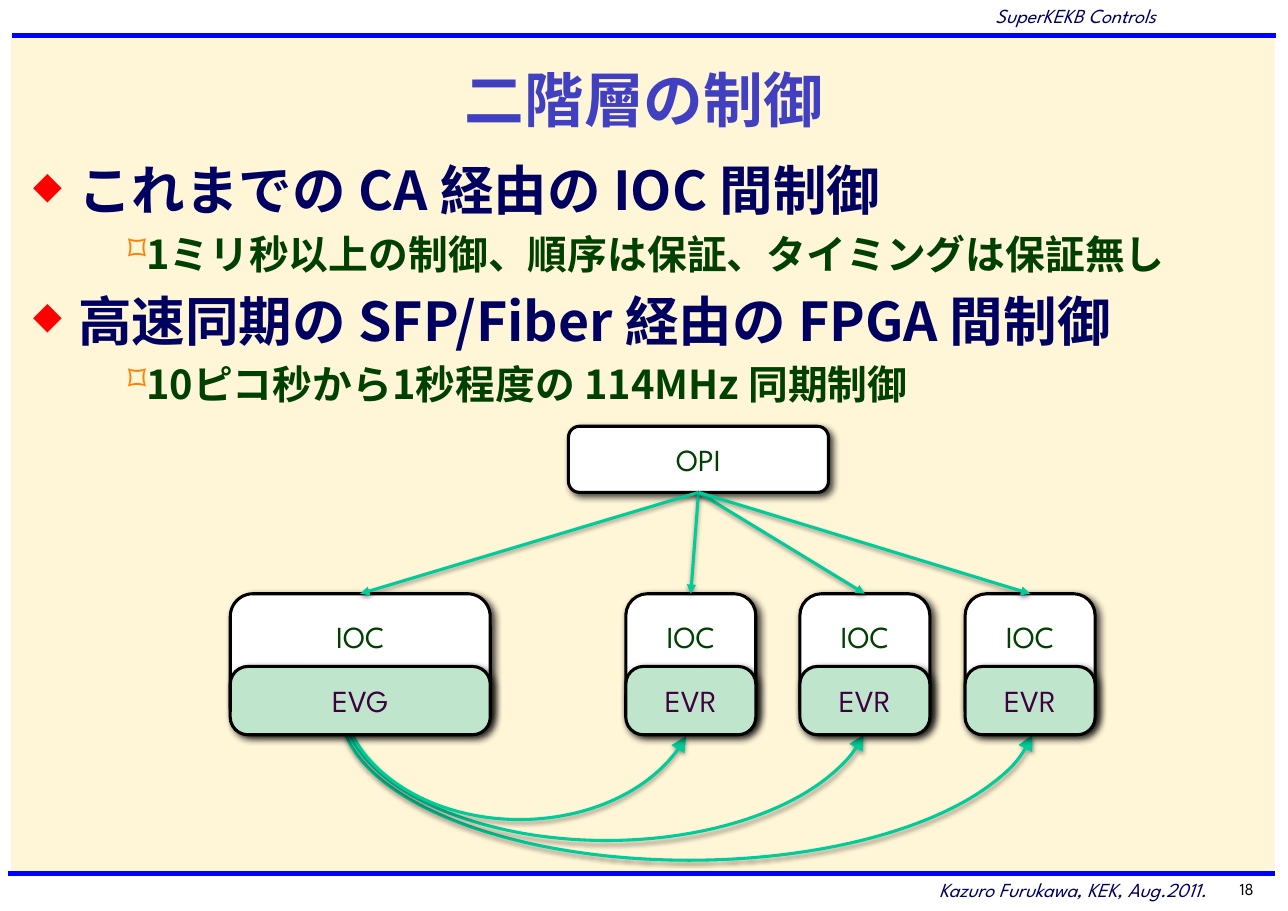
import pptx
import pptx.util
import pptx.dml.color
import pptx.enum.shapes
import pptx.enum.text
import pptx.oxml
import pptx.oxml.ns

Inches, Pt = pptx.util.Inches, pptx.util.Pt
SHAPE = pptx.enum.shapes.MSO_SHAPE
ALIGN = pptx.enum.text.PP_ALIGN
ANCHOR = pptx.enum.text.MSO_ANCHOR
STRAIGHT = pptx.enum.shapes.MSO_CONNECTOR.STRAIGHT
NAMESPACE = pptx.oxml.ns.nsdecls("a")

THEME = {
    "paper": "FFF5D7", "rule": "0000FF", "outline": "000000", "arrow": "00CC99",
    "white": "FFFFFF", "event": "BFE6CC",
    "title": dict(size=39, name="Noto Sans CJK JP", color="4040C0", bold=True),
    "topic": dict(size=35, name="Noto Sans CJK JP", color="000060", bold=True),
    "detail": dict(size=26, name="Noto Sans CJK JP", color="004000", bold=True),
    "running": dict(size=13, name="League Spartan", color="000060", italic=True),
    "number": dict(size=11, name="League Spartan", color="000000"),
    "control": dict(size=20, name="League Spartan", color="004000"),
    "timing": dict(size=20, name="League Spartan", color="400040"),
}
# colour, opacity %, blur pt, distance pt, direction in degrees
BOX_SHADOW = ("000000", 75, 5, 2.8, 45)
ARROW_SHADOW = ("000000", 38, 3.1, 1.6, 90)

TITLE = "二階層の制御"
BODY = [
    ("topic", "これまでの CA 経由の IOC 間制御"),
    ("detail", "1ミリ秒以上の制御、順序は保証、タイミングは保証無し"),
    ("topic", "高速同期の SFP/Fiber 経由の FPGA 間制御"),
    ("detail", "10ピコ秒から1秒程度の 114MHz 同期制御"),
]
# level, left margin, first-line indent, bullet, bullet colour, bullet size %, space before
BULLETS = {
    "topic": (0, 0.41, -0.41, "◆", "FF0000", 70, 7),
    "detail": (1, 0.45, 0.41, "⌑", "FF7F00", 90, 5),
}
RUNNING_TEXT = [
    ("running", "Kazuro Furukawa, KEK, Aug.2011.", (7.85, 7.92, 3.21, 0.33)),
    ("running", "SuperKEKB Controls", (7.85, -0.02, 2.75, 0.33)),
    ("number", "18", (10.81, 7.93, 0.68, 0.28)),
]
RULES = [(0.11, 11.58, 0.32), (0.07, 11.57, 7.93)]
OPI = ("OPI", (5.16, 3.87, 2.36, 0.6))
# left, width, event module
STATIONS = [(2.09, 2.36, "EVG"), (5.68, 1.18, "EVR"),
            (7.26, 1.18, "EVR"), (8.76, 1.18, "EVR")]
# width, height, start and end adjustment
EVENT_ARCS = [(6.33, 2.76, 2.66, 105.3), (4.83, 2.58, 4.8, 103.51),
              (3.25, 2.39, 9.7, 98.87)]


def rgb(value):
    return pptx.dml.color.RGBColor.from_string(value)


def add_xml(parent, markup):
    """Append one DrawingML element, written without its namespace."""
    tag, rest = markup[1:].split(" ", 1)
    parent.append(pptx.oxml.parse_xml(f"<a:{tag} {NAMESPACE} {rest}"))


def set_shadow(shape, shadow=None):
    """Replace any inherited effect by the given outer shadow, or by none."""
    properties = shape._element.spPr
    if shadow is None:
        add_xml(properties, "<effectLst />")
        return
    color, opacity, blur, distance, direction = shadow
    add_xml(properties, (
        f'<effectLst ><a:outerShdw blurRad="{Pt(blur)}" dist="{Pt(distance)}" '
        f'dir="{direction * 60000}" rotWithShape="0"><a:srgbClr val="{color}">'
        f'<a:alpha val="{opacity * 1000}"/></a:srgbClr></a:outerShdw></a:effectLst>'))


def set_line(shape, color, width, head=None):
    shape.line.color.rgb = rgb(color)
    shape.line.width = Pt(width)
    if head:
        add_xml(shape.line._get_or_add_ln(),
                f'<headEnd type="triangle" w="{head}" len="{head}"/>')


def write(paragraph, text, style):
    run = paragraph.add_run()
    run.text = text
    for key, value in THEME[style].items():
        if key == "color":
            run.font.color.rgb = rgb(value)
        else:
            setattr(run.font, key, Pt(value) if key == "size" else value)
    add_xml(run._r.get_or_add_rPr(), f'<ea typeface="{THEME[style]["name"]}"/>')


def set_frame(frame, anchor, side, top, bottom):
    values = dict(word_wrap=True, vertical_anchor=anchor, margin_left=Inches(side),
                  margin_right=Inches(side), margin_top=Inches(top),
                  margin_bottom=Inches(bottom))
    for key, value in values.items():
        setattr(frame, key, value)


def add_text(slide, place, anchor=ANCHOR.TOP):
    frame = slide.shapes.add_textbox(*map(Inches, place)).text_frame
    set_frame(frame, anchor, 0.11, 0.05, 0.05)
    return frame


def add_label(slide, place, text, style, align, anchor=ANCHOR.TOP):
    paragraph = add_text(slide, place, anchor).paragraphs[0]
    paragraph.alignment = align
    write(paragraph, text, style)


def add_body(slide):
    frame = add_text(slide, (0.19, 1.38, 11.32, 2.5))
    for index, (style, text) in enumerate(BODY):
        paragraph = frame.add_paragraph() if index else frame.paragraphs[0]
        level, margin, indent, bullet, color, size, space = BULLETS[style]
        paragraph.level = level
        if index:
            paragraph.space_before = Pt(space)
        properties = paragraph._p.get_or_add_pPr()
        properties.set("marL", str(Inches(margin)))
        properties.set("indent", str(Inches(indent)))
        add_xml(properties, f'<buClr ><a:srgbClr val="{color}"/></a:buClr>')
        add_xml(properties, f'<buSzPct val="{size * 1000}"/>')
        add_xml(properties, f'<buChar char="{bullet}"/>')
        write(paragraph, text, style)


def add_box(slide, place, text, fill, style, corner=0.167, anchor=ANCHOR.MIDDLE, top=0.03):
    box = slide.shapes.add_shape(SHAPE.ROUNDED_RECTANGLE, *map(Inches, place))
    box.adjustments[0] = corner
    box.fill.solid()
    box.fill.fore_color.rgb = rgb(THEME[fill])
    set_line(box, THEME["outline"], 2)
    set_shadow(box, BOX_SHADOW)
    set_frame(box.text_frame, anchor, 0.05, top, 0.03)
    paragraph = box.text_frame.paragraphs[0]
    paragraph.alignment = ALIGN.CENTER
    write(paragraph, text, style)
    return box


def add_background(slide):
    paper = slide.shapes.add_shape(SHAPE.RECTANGLE, *map(Inches, (0.1, 0.32, 11.47, 7.62)))
    paper.fill.solid()
    paper.fill.fore_color.rgb = rgb(THEME["paper"])
    paper.line.fill.background()
    set_shadow(paper)
    for left, right, y in RULES:
        rule = slide.shapes.add_connector(STRAIGHT, *map(Inches, (left, y, right, y)))
        set_line(rule, THEME["rule"], 3)
        set_shadow(rule)


def add_diagram(slide):
    for width, height, *ends in EVENT_ARCS:
        arc = slide.shapes.add_shape(SHAPE.ARC, *map(Inches, (3.09, 5.05, width, height)))
        for index, end in enumerate(ends):
            arc.adjustments[index] = end
        arc.fill.background()
        set_line(arc, THEME["arrow"], 2, head="lg")
        set_shadow(arc, ARROW_SHADOW)
    controllers = []
    for left, width, module in STATIONS:
        controllers.append(add_box(slide, (left, 5.39, width, 1.24), "IOC", "white",
                                   "control", anchor=ANCHOR.TOP, top=0.16))
        add_box(slide, (left, 6.05, width, 0.62), module, "event", "timing", corner=0.259)
    name, place = OPI
    operator = add_box(slide, place, name, "white", "control")
    for controller in controllers:
        arrow = slide.shapes.add_connector(STRAIGHT, 0, 0, 0, 0)
        arrow.begin_connect(controller, 0)
        arrow.end_connect(operator, 2)
        set_line(arrow, THEME["arrow"], 2, head="med")
        set_shadow(arrow, ARROW_SHADOW)


def main():
    presentation = pptx.Presentation()
    presentation.slide_width, presentation.slide_height = Inches(11.69), Inches(8.27)
    slide = presentation.slides.add_slide(presentation.slide_layouts[6])
    add_background(slide)
    add_label(slide, (0.18, 0.51, 11.33, 0.78), TITLE, "title", ALIGN.CENTER, ANCHOR.MIDDLE)
    add_body(slide)
    for style, text, place in RUNNING_TEXT:
        add_label(slide, place, text, style, ALIGN.RIGHT)
    add_diagram(slide)
    presentation.save("out.pptx")


if __name__ == "__main__":
    main()
